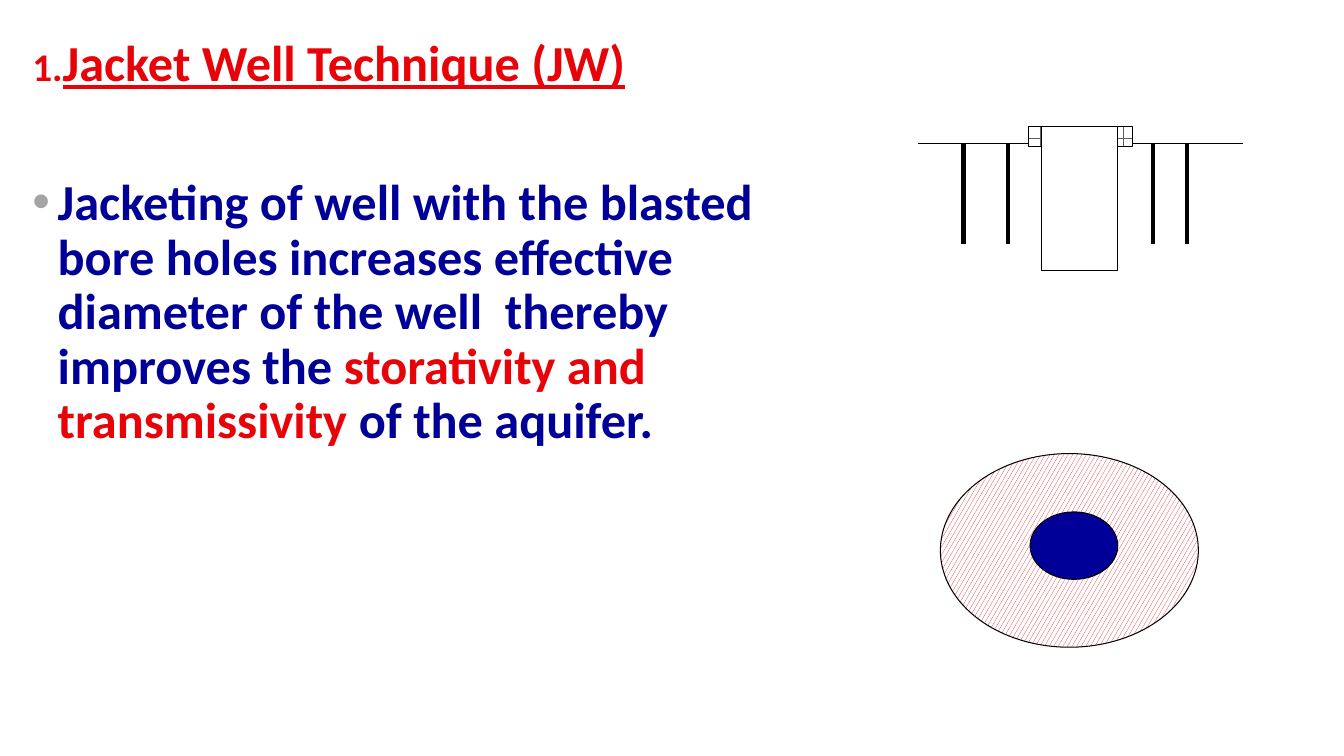
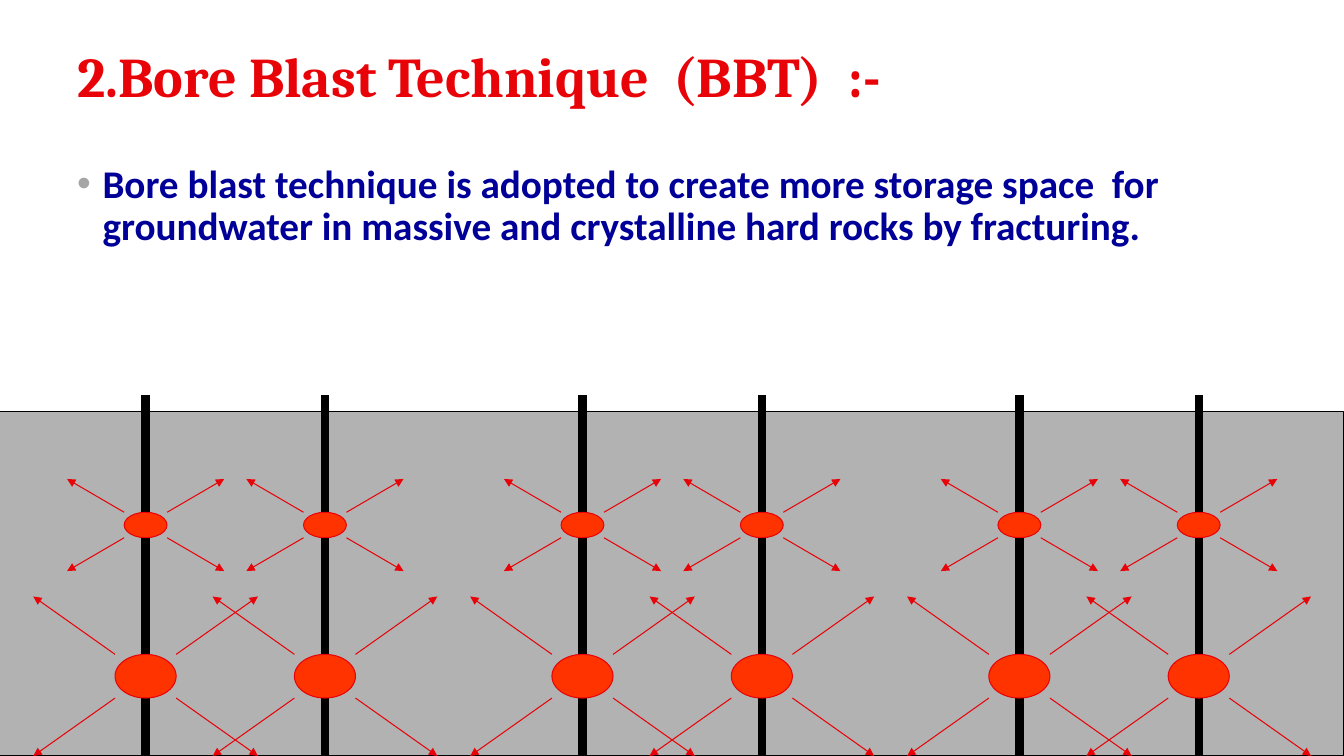
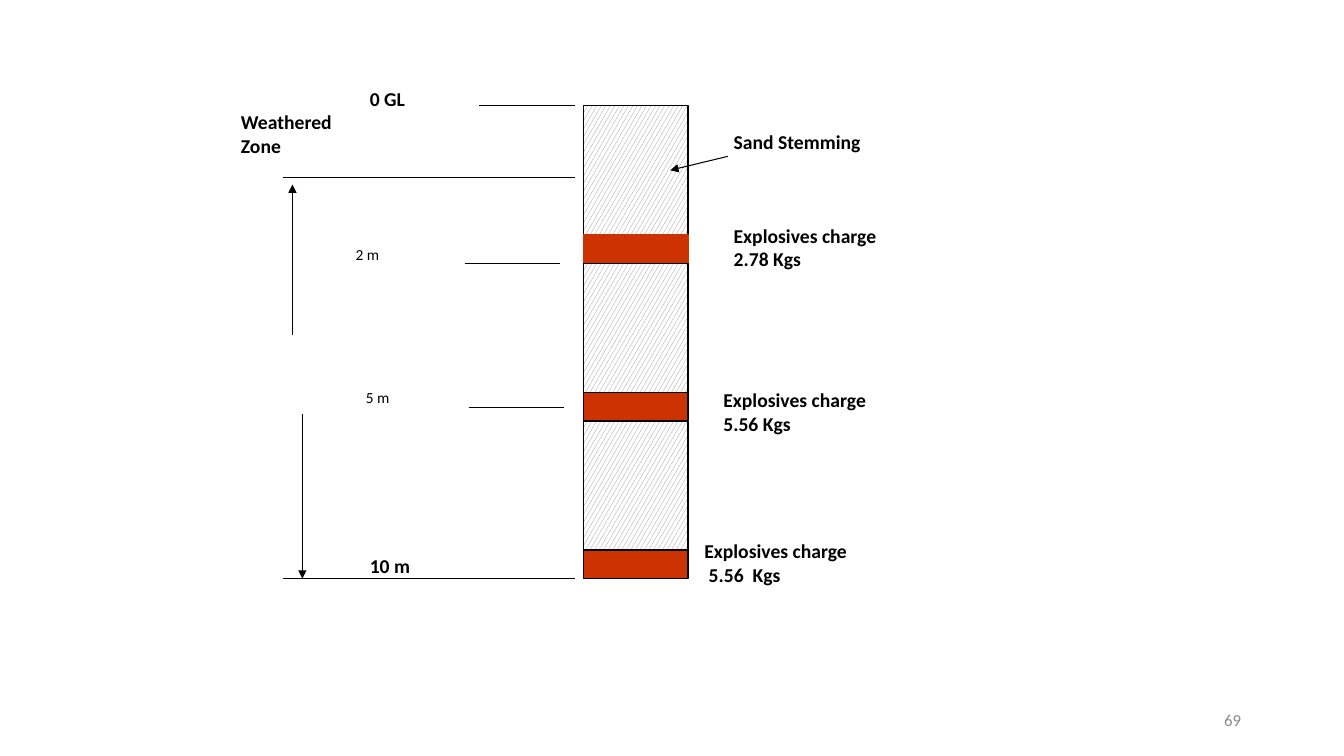
from lxml import etree
from pptx import Presentation
from pptx.dml.color import RGBColor
from pptx.enum import dml, shapes, text
from pptx.oxml import ns
from pptx.util import Cm, Pt

RED, NAVY, BLACK, WHITE = "E70308", "000099", "000000", "FFFFFF"
GREY, ROCK, BRICK, SAND = "A5A5A5", "B2B2B2", "5F5F5F", "808080"
BLAST, CHARGE, FOOTER = "FF3300", "CC3300", "8C8C8C"
BODY_FONT, TITLE_FONT = "Calibri", "Cambria"
RECT, OVAL = shapes.MSO_SHAPE.RECTANGLE, shapes.MSO_SHAPE.OVAL
CONFETTI = dml.MSO_PATTERN.LARGE_CONFETTI
BRICKS = dml.MSO_PATTERN.HORIZONTAL_BRICK


def colour(value):
    return RGBColor.from_string(value)


def add_child(parent, tag, **attributes):
    return etree.SubElement(parent, ns.qn(tag), attributes)


def add_span(para, words, size, shade, bold=True, font=BODY_FONT, underline=False):
    span = para.add_run()
    span.text = words
    span.font.name = font
    span.font.size = Pt(size)
    span.font.bold = bold
    span.font.underline = underline
    span.font.color.rgb = colour(shade)


def add_figure(page, kind, left, top, width, height, fill, line=BLACK, pattern=None):
    figure = page.shapes.add_shape(kind, Cm(left), Cm(top), Cm(width), Cm(height))
    figure.shadow.inherit = False
    if pattern is None:
        figure.fill.solid()
        figure.fill.fore_color.rgb = colour(fill)
    else:
        figure.fill.patterned()
        figure.fill.pattern = pattern
        figure.fill.fore_color.rgb = colour(fill)
        figure.fill.back_color.rgb = colour(WHITE)
    figure.line.color.rgb = colour(line)
    figure.line.width = Pt(0.75)


def add_line(page, x1, y1, x2, y2, shade=BLACK, weight=0.75, arrow=False):
    line = page.shapes.add_connector(
        shapes.MSO_CONNECTOR.STRAIGHT, Cm(x1), Cm(y1), Cm(x2), Cm(y2))
    line.line.color.rgb = colour(shade)
    line.line.width = Pt(weight)
    if arrow:
        add_child(line.line._get_or_add_ln(), "a:tailEnd", type="triangle")
    add_child(line._element.spPr, "a:effectLst")


def place(holder, left, top, width, height, anchor):
    holder.left, holder.top = Cm(left), Cm(top)
    holder.width, holder.height = Cm(width), Cm(height)
    frame = holder.text_frame
    frame.auto_size = text.MSO_AUTO_SIZE.NONE
    frame.word_wrap = True
    frame.vertical_anchor = anchor
    para = frame.paragraphs[0]
    para.alignment = text.PP_ALIGN.LEFT
    para.line_spacing = 0.9
    para.space_before = Pt(0)
    return para


def fill_title(page, box, anchor):
    return place(page.shapes.title, *box, anchor)


def fill_bullet(page, box, size, parts):
    para = place(page.placeholders[1], *box, text.MSO_ANCHOR.TOP)
    settings = para._p.get_or_add_pPr()
    settings.set("marL", str(Cm(0.64)))
    settings.set("indent", str(-Cm(0.64)))
    add_child(add_child(settings, "a:buClr"), "a:srgbClr", val=GREY)
    add_child(settings, "a:buChar", char="•")
    for words, shade in parts:
        add_span(para, words, size, shade)


def add_label(page, left, top, width, height, lines, size=14, bold=True):
    box = page.shapes.add_textbox(Cm(left), Cm(top), Cm(width), Cm(height))
    frame = box.text_frame
    frame.word_wrap = True
    frame.margin_left = frame.margin_right = Cm(0.15)
    frame.margin_top = frame.margin_bottom = Cm(0.08)
    for index, words in enumerate(lines):
        para = frame.add_paragraph() if index else frame.paragraphs[0]
        add_span(para, words, size, BLACK, bold)


def draw_well_section(page, left, top, width):
    ground = top + 0.43
    add_line(page, left, ground, left + width, ground)
    add_figure(page, RECT, left + 2.77, top, 2.62, 0.51, BRICK, pattern=BRICKS)
    for offset in (1.14, 2.26, 5.92, 6.78):
        add_line(page, left + offset, ground, left + offset, ground + 2.54, weight=3)
    add_figure(page, RECT, left + 3.1, top, 1.93, 3.63, WHITE)


def draw_well_plan(page, left, top, width, height):
    add_figure(page, OVAL, left, top, width, height, RED, pattern=CONFETTI)
    add_figure(page, OVAL, left + 2.26, top + 1.47, 2.21, 1.7, NAVY)


def draw_blast(page, x, y, width, height, reach_x, reach_y):
    add_figure(page, OVAL, x - width / 2, y - height / 2, width, height, BLAST, RED)
    for side in (1, -1):
        for rise in (-1, 1):
            add_line(page, x + side * width / 2, y + rise * height / 2,
                     x + side * reach_x, y + rise * reach_y, RED, arrow=True)


def draw_blasted_rock(page, left, top, width, height):
    add_figure(page, RECT, left, top, width, height, ROCK)
    for pair in range(3):
        for hole in range(2):
            x = left + 3.67 + 11.01 * pair + 4.52 * hole
            add_line(page, x, top - 0.42, x, top + height, weight=6)
            draw_blast(page, x, top + 2.86, 1.08, 0.64, 1.98, 1.16)
            draw_blast(page, x, top + 6.67, 1.54, 1.1, 2.83, 2.01)


def draw_charge_column(page, left, top, width, stem, charge):
    for layer in range(3):
        y = top + layer * (stem + charge)
        add_figure(page, RECT, left, y, width, stem, SAND, pattern=CONFETTI)
        add_figure(page, RECT, left, y + stem, width, charge, CHARGE,
                   BLACK if layer else CHARGE)


def draw_bore_section(page, left, top):
    draw_charge_column(page, left + 8.78, top, 2.64, 3.25, 0.72)
    for start, end, depth in ((6.15, 8.56, 0), (1.22, 8.56, 1.8), (5.79, 8.2, 3.96),
                              (5.89, 8.3, 7.59), (1.22, 8.56, 11.91)):
        add_line(page, left + start, top + depth, left + end, top + depth)
    for x1, y1, x2, y2 in ((12.42, 1.27, 10.97, 1.62), (1.45, 5.76, 1.45, 1.98),
                           (1.7, 7.77, 1.7, 11.91)):
        add_line(page, left + x1, top + y1, left + x2, top + y2, arrow=True)
    for x, y, width, height, lines in (
            (3.25, -0.56, 2.72, 1.09, ["0 GL"]),
            (3.25, 11.2, 2.77, 1.09, ["10 m"]),
            (0, 0.02, 5.79, 1.96, ["Weathered", "Zone"]),
            (12.42, 0.53, 7.87, 1.09, ["Sand Stemming"]),
            (12.42, 2.89, 9.04, 1.96, ["Explosives charge", "2.78 Kgs"]),
            (12.16, 7.03, 9.04, 1.96, ["Explosives charge", "5.56 Kgs"]),
            (11.68, 10.84, 9.04, 1.96, ["Explosives charge", " 5.56  Kgs"])):
        add_label(page, left + x, top + y, width, height, lines)
    for x, y, words in ((2.89, 3.43, "2 m"), (3.15, 7.03, "5 m")):
        add_label(page, left + x, top + y, 1.78, 0.86, [words], 11, False)


def add_page_number(page, number):
    box = page.shapes.add_textbox(Cm(22.43), Cm(17.65), Cm(9.1), Cm(1.02))
    para = place(box, 22.43, 17.65, 9.1, 1.02, text.MSO_ANCHOR.MIDDLE)
    para.alignment = text.PP_ALIGN.RIGHT
    add_span(para, number, 12, FOOTER, False)


def build_jacket_well(deck):
    page = deck.slides.add_slide(deck.slide_layouts[1])
    title = fill_title(page, (0.56, 0.84, 21.16, 1.8), text.MSO_ANCHOR.TOP)
    add_span(title, "1.", 28, RED)
    add_span(title, "Jacket Well Technique (JW)", 36, RED, underline=True)
    fill_bullet(page, (0.56, 4.34, 21.16, 14.48), 36, (
        ("Jacketing of well with the blasted bore holes increases effective "
         "diameter of the well  thereby improves the ", NAVY),
        ("storativity and transmissivity", RED),
        (" of the aquifer.", NAVY)))
    draw_well_plan(page, 23.7, 11.43, 6.5, 4.88)
    draw_well_section(page, 23.14, 3.18, 8.18)


def build_bore_blast(deck):
    page = deck.slides.add_slide(deck.slide_layouts[1])
    title = fill_title(page, (1.69, 0.42, 30.48, 3.18), text.MSO_ANCHOR.MIDDLE)
    add_span(title, "2.Bore Blast Technique  (BBT)  :-", 40, RED, font=TITLE_FONT)
    fill_bullet(page, (1.69, 4.02, 30.48, 12.57), 28, (
        ("Bore blast technique is adopted to create more storage space  for "
         "groundwater in massive and crystalline hard rocks by fracturing.", NAVY),))
    draw_blasted_rock(page, 0, 10.37, 33.87, 8.68)


def build_charge_layout(deck):
    page = deck.slides.add_slide(deck.slide_layouts[6])
    add_page_number(page, "69")
    draw_bore_section(page, 5.92, 2.67)


def main():
    deck = Presentation()
    deck.slide_width, deck.slide_height = Cm(33.87), Cm(19.05)
    build_jacket_well(deck)
    build_bore_blast(deck)
    build_charge_layout(deck)
    deck.save("out.pptx")


if __name__ == "__main__":
    main()
